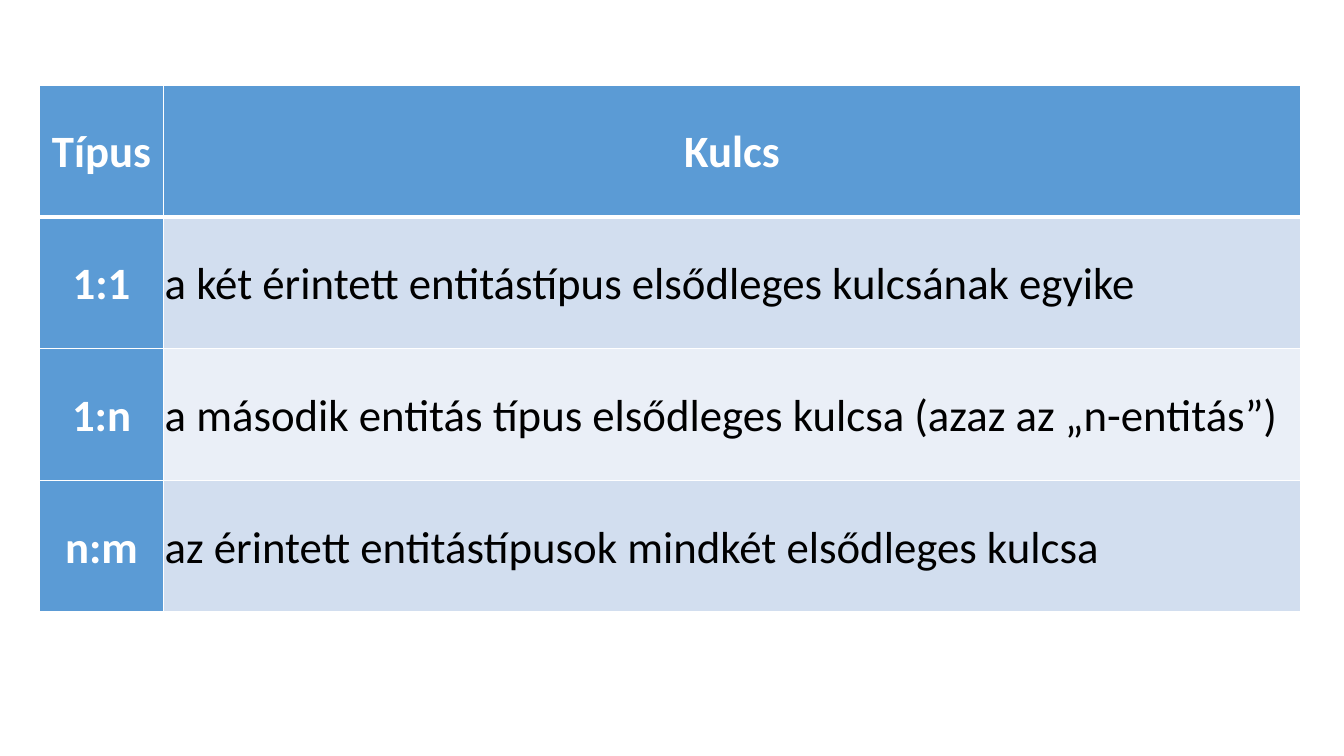
from lxml import etree
from pptx import Presentation
from pptx.dml.color import RGBColor
from pptx.enum.text import MSO_ANCHOR, PP_ALIGN
from pptx.oxml.ns import qn
from pptx.util import Cm, Pt

BLUE = RGBColor(0x5B, 0x9B, 0xD5)
DARK = RGBColor(0xD2, 0xDE, 0xEF)
LIGHT = RGBColor(0xEA, 0xEF, 0xF7)
WHITE = RGBColor(0xFF, 0xFF, 0xFF)
BLACK = RGBColor(0x00, 0x00, 0x00)
MIDDLE = MSO_ANCHOR.MIDDLE
LEFT, CENTER = PP_ALIGN.LEFT, PP_ALIGN.CENTER

ROWS = [
    ("Típus", "Kulcs"),
    ("1:1", "a két érintett entitástípus elsődleges kulcsának egyike"),
    ("1:n", "a második entitás típus elsődleges kulcsa (azaz az „n-entitás”)"),
    ("n:m", "az érintett entitástípusok mindkét elsődleges kulcsa"),
]
WIDTHS = [Cm(3.12), Cm(28.65)]
HEIGHT = Cm(3.32)


def add_edge(cell, side, width):
    """Draw one white cell border; call before the fill is set."""
    props = cell._tc.get_or_add_tcPr()
    line = etree.SubElement(props, qn(f"a:ln{side}"), w=str(Pt(width)))
    fill = etree.SubElement(line, qn("a:solidFill"))
    etree.SubElement(fill, qn("a:srgbClr"), val=str(WHITE))


# Slide
deck = Presentation()
deck.slide_width, deck.slide_height = Cm(33.87), Cm(19.05)
slide = deck.slides.add_slide(deck.slide_layouts[6])

# Table of keys
table = slide.shapes.add_table(
    len(ROWS), len(WIDTHS), Cm(1), Cm(2.14), sum(WIDTHS), HEIGHT * len(ROWS)
).table
table.first_col = True
for column, width in zip(table.columns, WIDTHS):
    column.width = width

# Cells: blue header row and column, banded body
for i, row in enumerate(ROWS):
    table.rows[i].height = HEIGHT
    for j, text in enumerate(row):
        cell = table.cell(i, j)
        head = i == 0 or j == 0
        cell.vertical_anchor = MIDDLE
        cell.margin_left = cell.margin_right = Cm(0.03)
        cell.margin_top = cell.margin_bottom = Cm(0.03)

        # Thick line between header and body
        add_edge(cell, "L", 1)
        add_edge(cell, "R", 1)
        add_edge(cell, "T", 3 if i == 1 else 1)
        add_edge(cell, "B", 3 if i == 0 else 1)
        cell.fill.solid()
        cell.fill.fore_color.rgb = BLUE if head else DARK if i % 2 else LIGHT

        par = cell.text_frame.paragraphs[0]
        par.text = text
        par.alignment = CENTER if head else LEFT
        par.line_spacing = 1.07
        par.space_after = Pt(8)
        par.font.name = "Calibri"
        par.font.size = Pt(32)
        par.font.bold = head
        par.font.color.rgb = WHITE if head else BLACK

deck.save("out.pptx")
